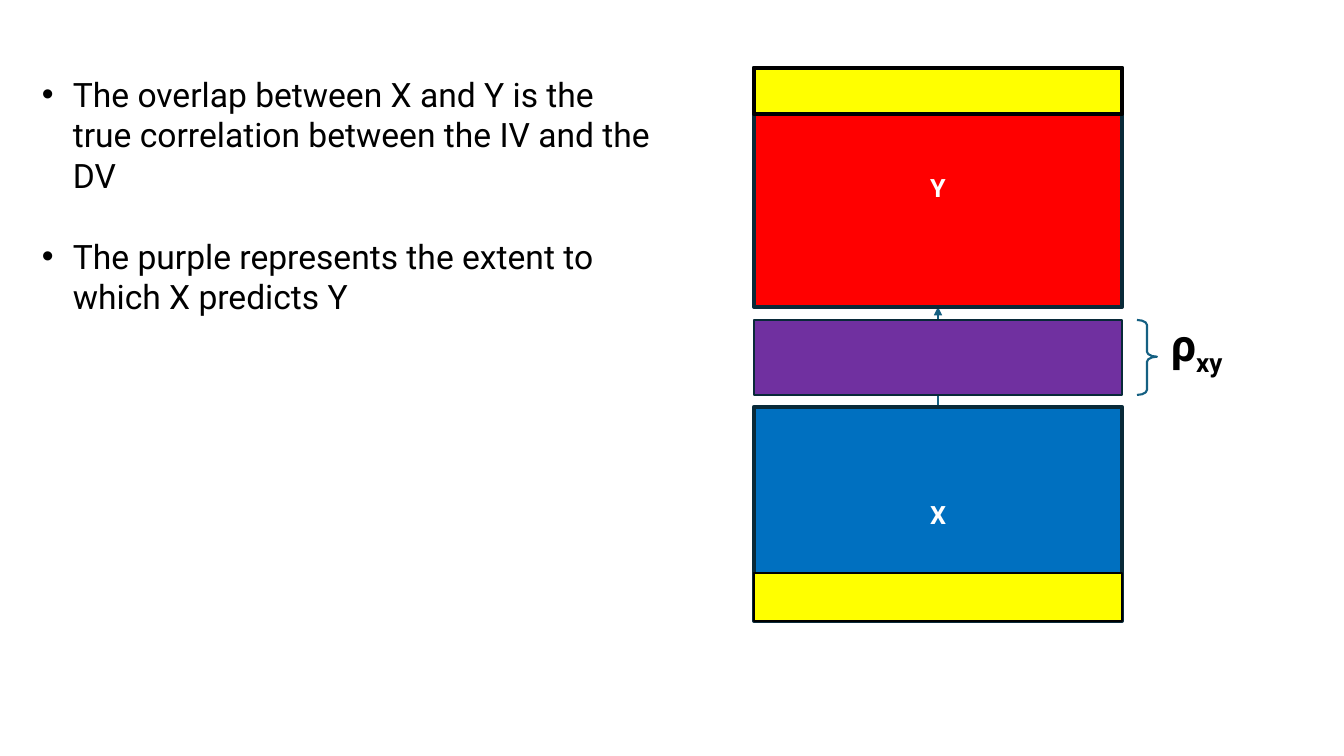
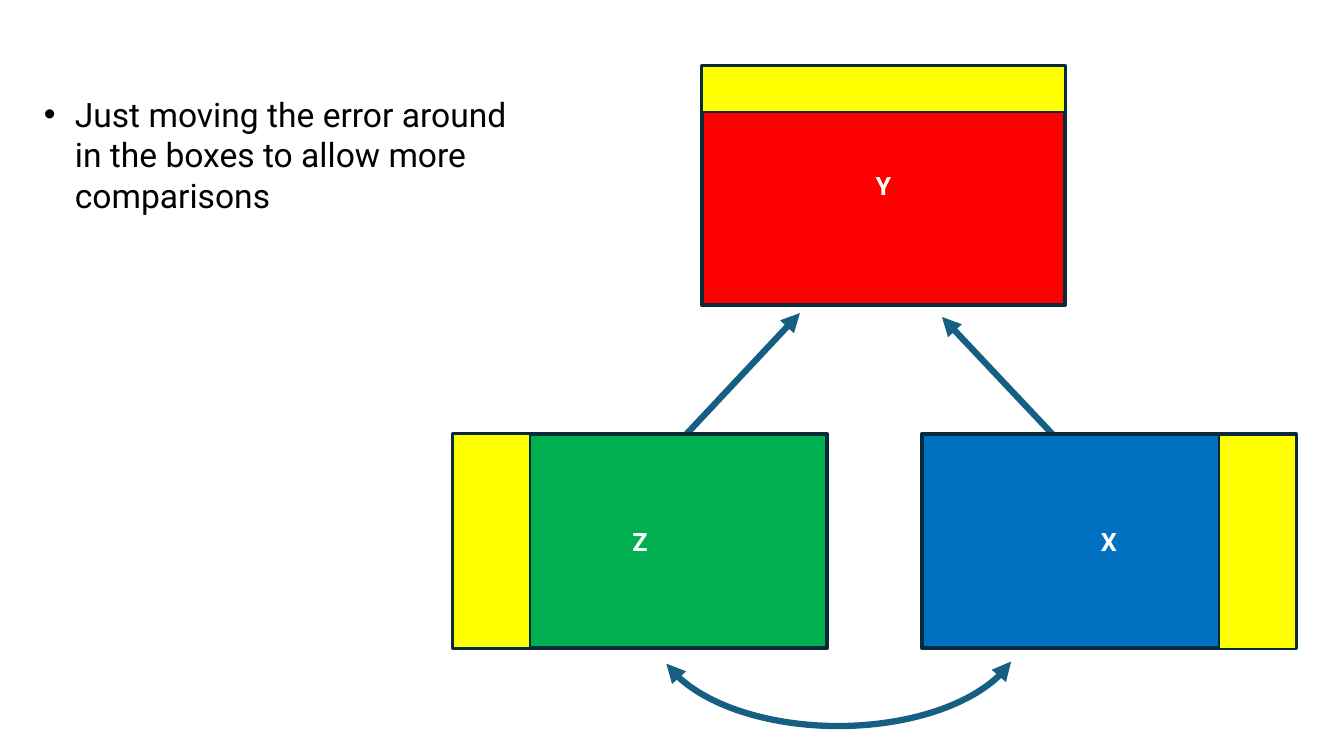
from lxml import etree
from pptx import Presentation
from pptx.dml.color import RGBColor
from pptx.enum import shapes, text
from pptx.oxml import ns
from pptx.util import Pt

EMU_PER_PX = 914400 / 100.8
FONT = "Roboto"
BLACK = RGBColor(0x00, 0x00, 0x00)
WHITE = RGBColor(0xFF, 0xFF, 0xFF)
EDGE = RGBColor(0x09, 0x2A, 0x39)
TEAL = RGBColor(0x15, 0x60, 0x82)
RED = RGBColor(0xFF, 0x00, 0x00)
BLUE = RGBColor(0x00, 0x70, 0xC0)
GREEN = RGBColor(0x00, 0xB0, 0x50)
PURPLE = RGBColor(0x70, 0x30, 0xA0)
YELLOW = RGBColor(0xFF, 0xFF, 0x00)
THIN, MEDIUM, THICK = 1.5, 3, 4.5
BLOCK_H, OUTCOME_H = 214, 239
INDENT = 31


def px(*lengths):
    """Turn pixel lengths into a list of EMU."""
    return [round(length * EMU_PER_PX) for length in lengths]


def add_run(paragraph, words, size, color, bold=False):
    """Add one styled run to a paragraph and return it."""
    run = paragraph.add_run()
    run.text = words
    run.font.name = FONT
    run.font.size = Pt(size)
    run.font.bold = bold
    run.font.color.rgb = color
    return run


def add_outline(element, color, weight, ends=()):
    """Style an outline and put triangles at the named ends."""
    element.line.color.rgb = color
    element.line.width = Pt(weight)
    line = element.element.spPr.find(ns.qn("a:ln"))
    for end in ends:
        etree.SubElement(line, ns.qn(f"a:{end}"), type="triangle")


def add_block(slide, box, fill, label="", edge=EDGE, weight=MEDIUM):
    """Draw a filled rectangle with an optional centred label."""
    block = slide.shapes.add_shape(shapes.MSO_SHAPE.RECTANGLE, *px(*box))
    block.shadow.inherit = False
    block.fill.solid()
    block.fill.fore_color.rgb = fill
    add_outline(block, edge, weight)
    if label:
        block.text_frame.vertical_anchor = text.MSO_ANCHOR.MIDDLE
        paragraph = block.text_frame.paragraphs[0]
        paragraph.alignment = text.PP_ALIGN.CENTER
        add_run(paragraph, label, 18, WHITE, bold=True)


def add_curve(slide, preset, box, adjustments, weight, ends=()):
    """Draw an unfilled preset curve and return it."""
    curve = slide.shapes.add_shape(preset, *px(*box))
    curve.shadow.inherit = False
    curve.fill.background()
    for index, value in enumerate(adjustments):
        curve.adjustments[index] = value
    add_outline(curve, TEAL, weight, ends)
    return curve


def add_arrow(slide, start, end, weight):
    """Draw a straight arrow from start to end."""
    arrow = slide.shapes.add_connector(
        shapes.MSO_CONNECTOR.STRAIGHT, *px(*start, *end))
    add_outline(arrow, TEAL, weight, ["tailEnd"])
    etree.SubElement(arrow.element.spPr, ns.qn("a:effectLst"))


def add_text_frame(slide, box, wrap):
    """Add a text box that grows with its text and return its frame."""
    frame = slide.shapes.add_textbox(*px(*box)).text_frame
    frame.word_wrap = wrap
    frame.auto_size = text.MSO_AUTO_SIZE.SHAPE_TO_FIT_TEXT
    return frame


def add_bullets(slide, box, points):
    """Write bulleted points, one line apart."""
    frame = add_text_frame(slide, box, wrap=True)
    for index, point in enumerate(points):
        paragraph = frame.add_paragraph() if index else frame.paragraphs[0]
        properties = paragraph._p.get_or_add_pPr()
        indent, = px(INDENT)
        properties.set("marL", str(indent))
        properties.set("indent", str(-indent))
        etree.SubElement(properties, ns.qn("a:buFont"), typeface="Arial")
        etree.SubElement(properties, ns.qn("a:buChar"), char="•")
        if index:
            paragraph.space_before = Pt(29)
        add_run(paragraph, point, 24, BLACK)


def add_correlation_label(slide, box):
    """Write the true correlation symbol with its subscript."""
    paragraph = add_text_frame(slide, box, wrap=False).paragraphs[0]
    add_run(paragraph, "ρ", 32, BLACK, bold=True)
    subscript = add_run(paragraph, "xy", 32, BLACK, bold=True)
    subscript.font._element.set("baseline", "-25000")


def build_overlap(slide):
    """Stack X, the overlap and Y with their error strips."""
    left, width = 754, 368
    y_top, overlap_top, x_top = 68, 320, 407
    overlap_h, x_error_h = 75, 48
    middle = left + width // 2
    add_arrow(slide, (middle, x_top), (middle, y_top + OUTCOME_H), THIN)
    add_block(slide, (left, x_top, width, BLOCK_H), BLUE, "X")
    x_error_top = x_top + BLOCK_H - x_error_h
    add_block(slide, (left, x_error_top, width, x_error_h), YELLOW,
              edge=BLACK, weight=THIN)
    add_block(slide, (left, y_top, width, OUTCOME_H), RED, "Y")
    add_block(slide, (left, y_top, width, 46), YELLOW, edge=BLACK)
    add_block(slide, (left, overlap_top, width, overlap_h), PURPLE,
              weight=THIN)
    add_correlation_label(slide, (1161, 312, 77, 65))
    add_curve(slide, shapes.MSO_SHAPE.RIGHT_BRACE,
              (1137, overlap_top, 20, overlap_h), (0.25, 0.49), THIN)
    add_bullets(slide, (32, 69, 639, 214), [
        "The overlap between X and Y is the true correlation between "
        "the IV and the DV",
        "The purple represents the extent to which X predicts Y",
    ])


def build_comparison(slide):
    """Show Z and X predicting Y, with the error strips moved outward."""
    z_left, x_left, top, width, error_w = 453, 922, 434, 374, 77
    y_left, y_top, y_width = 702, 66, 363
    add_arrow(slide, (635, 489), (800, 313), THICK)
    add_block(slide, (z_left, top, width, BLOCK_H), GREEN, "Z")
    add_arrow(slide, (1107, 492), (942, 317), THICK)
    add_block(slide, (y_left, y_top, y_width, OUTCOME_H), RED, "Y")
    add_block(slide, (x_left, top, width, BLOCK_H), BLUE, "X")
    x_error_left = x_left + width - error_w
    for error in (
        (z_left, top, error_w, BLOCK_H),
        (x_error_left, top + 1, error_w, BLOCK_H),
        (y_left, y_top, y_width, 46),
    ):
        add_block(slide, error, YELLOW, weight=THIN)
    add_bullets(slide, (34, 89, 489, 132), [
        "Just moving the error around in the boxes to allow more comparisons",
    ])
    arc = add_curve(slide, shapes.MSO_SHAPE.ARC, (654, 531, 368, 195),
                    (114.48, 209.06), THICK, ["headEnd", "tailEnd"])
    arc.rotation = 180


def main():
    """Build both slides and save the presentation."""
    deck = Presentation()
    deck.slide_width, deck.slide_height = px(1344, 756)
    for build in (build_overlap, build_comparison):
        build(deck.slides.add_slide(deck.slide_layouts[6]))
    deck.save("out.pptx")


if __name__ == "__main__":
    main()
